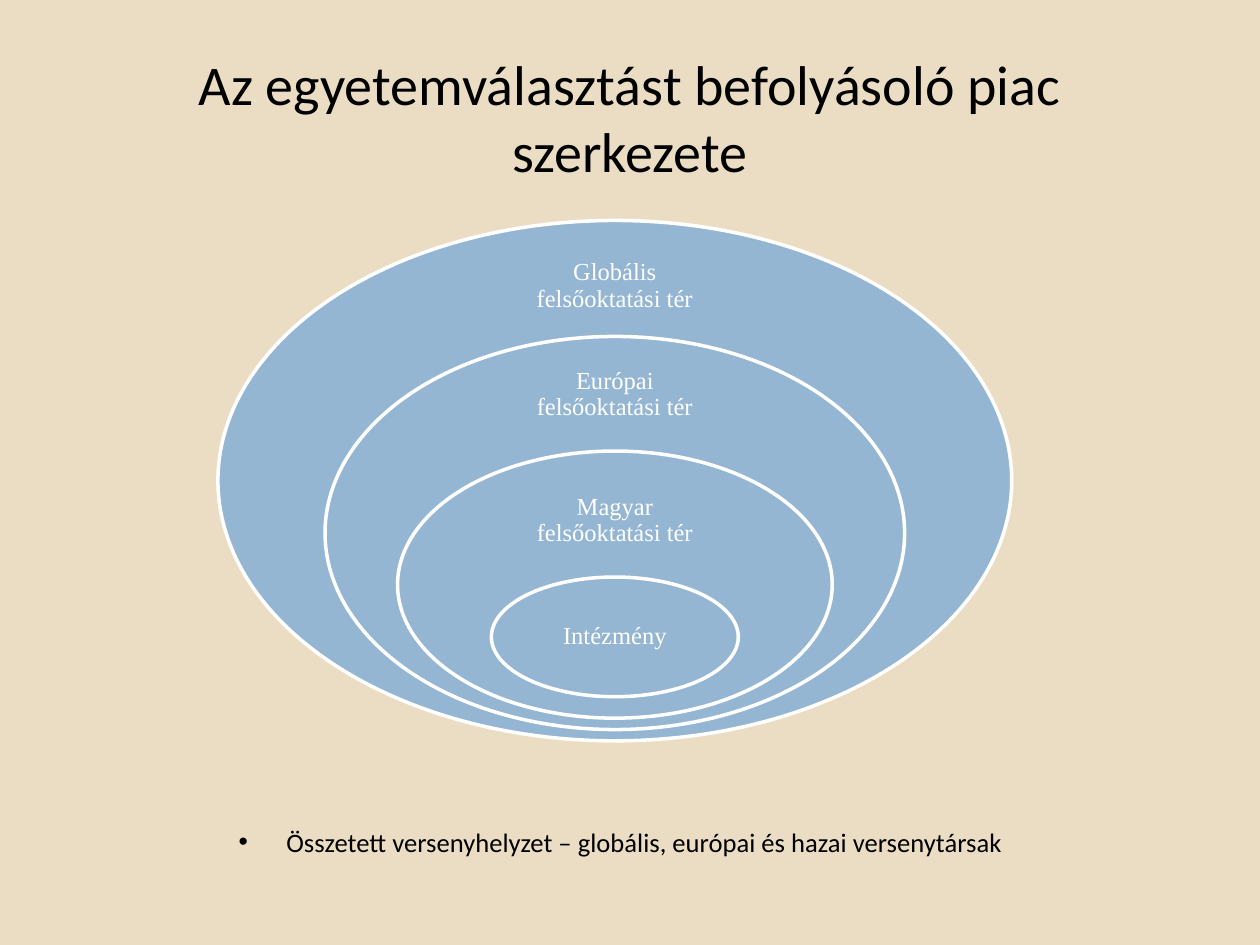
from lxml.etree import SubElement
from pptx import Presentation
from pptx.dml.color import RGBColor
from pptx.enum.shapes import MSO_SHAPE
from pptx.enum.text import MSO_ANCHOR, PP_ALIGN
from pptx.oxml.ns import qn
from pptx.util import Inches, Pt

SAND = RGBColor(0xEB, 0xDD, 0xC3)
BLUE = RGBColor(0x94, 0xB6, 0xD2)
WHITE = RGBColor(0xFF, 0xFF, 0xFF)
BLACK = RGBColor(0x00, 0x00, 0x00)

CENTER_X = 4.88
# ellipse top, width, height; label text, middle, width
MARKETS = [
    (1.75, 6.3, 4.13, "Globális felsőoktatási tér", 2.27, 1.76),
    (2.67, 4.6, 3.12, "Európai felsőoktatási tér", 3.13, 1.61),
    (3.58, 3.45, 2.12, "Magyar felsőoktatási tér", 4.13, 1.61),
    (4.58, 1.96, 0.95, "Intézmény", 5.05, 1.39),
]
LABEL_HEIGHT = 0.56


class MarketSlide:
    heading = {"name": "Calibri", "size": Pt(32)}
    label = {"name": "Times New Roman", "size": Pt(14)}
    body = {"name": "Calibri", "size": Pt(15.2)}

    def __init__(self, deck):
        self.slide = deck.slides.add_slide(deck.slide_layouts[6])
        fill = self.slide.background.fill
        fill.solid()
        fill.fore_color.rgb = SAND

    def add_text(self, place, text, font, color, inset=(0.1, 0.05), spacing=None):
        """Add a centred text box and return its paragraph."""
        box = self.slide.shapes.add_textbox(*map(Inches, place))
        frame = box.text_frame
        across, down = map(Inches, inset)
        frame_format = {
            "word_wrap": True, "vertical_anchor": MSO_ANCHOR.MIDDLE,
            "margin_left": across, "margin_right": across,
            "margin_top": down, "margin_bottom": down,
        }
        for name, value in frame_format.items():
            setattr(frame, name, value)
        para = frame.paragraphs[0]
        para.alignment = PP_ALIGN.CENTER
        para.line_spacing = spacing
        span = para.add_run()
        span.text = text
        for name, value in font.items():
            setattr(span.font, name, value)
        span.font.color.rgb = color
        return para

    def add_ellipse(self, place):
        ellipse = self.slide.shapes.add_shape(MSO_SHAPE.OVAL, *map(Inches, place))
        ellipse.shadow.inherit = False
        ellipse.fill.solid()
        ellipse.fill.fore_color.rgb = BLUE
        ellipse.line.color.rgb = WHITE
        ellipse.line.width = Pt(2)

    def add_market(self, top, width, height, text, middle, label_width):
        self.add_ellipse((CENTER_X - width / 2, top, width, height))
        place = (CENTER_X - label_width / 2, middle - LABEL_HEIGHT / 2,
                 label_width, LABEL_HEIGHT)
        self.add_text(place, text, self.label, WHITE, (0.11, 0.11), 0.9)

    def add_bullet(self, place, text):
        para = self.add_text(place, text, self.body, BLACK)
        properties = para._p.get_or_add_pPr()
        indent = Inches(0.38)
        properties.set("marL", str(indent))
        properties.set("indent", str(-indent))
        SubElement(properties, qn("a:buFont"), typeface="Arial")
        SubElement(properties, qn("a:buChar"), char="•")


def main():
    deck = Presentation()
    deck.slide_width, deck.slide_height = Inches(10), Inches(7.5)
    page = MarketSlide(deck)
    page.add_text((0.5, 0.3, 9, 1.25),
                  "Az egyetemválasztást befolyásoló piac szerkezete",
                  page.heading, BLACK)
    for market in MARKETS:
        page.add_market(*market)
    page.add_bullet((0.2, 6.4, 9.45, 0.56),
                    "Összetett versenyhelyzet – globális, európai és hazai versenytársak")
    deck.save("out.pptx")


if __name__ == "__main__":
    main()
